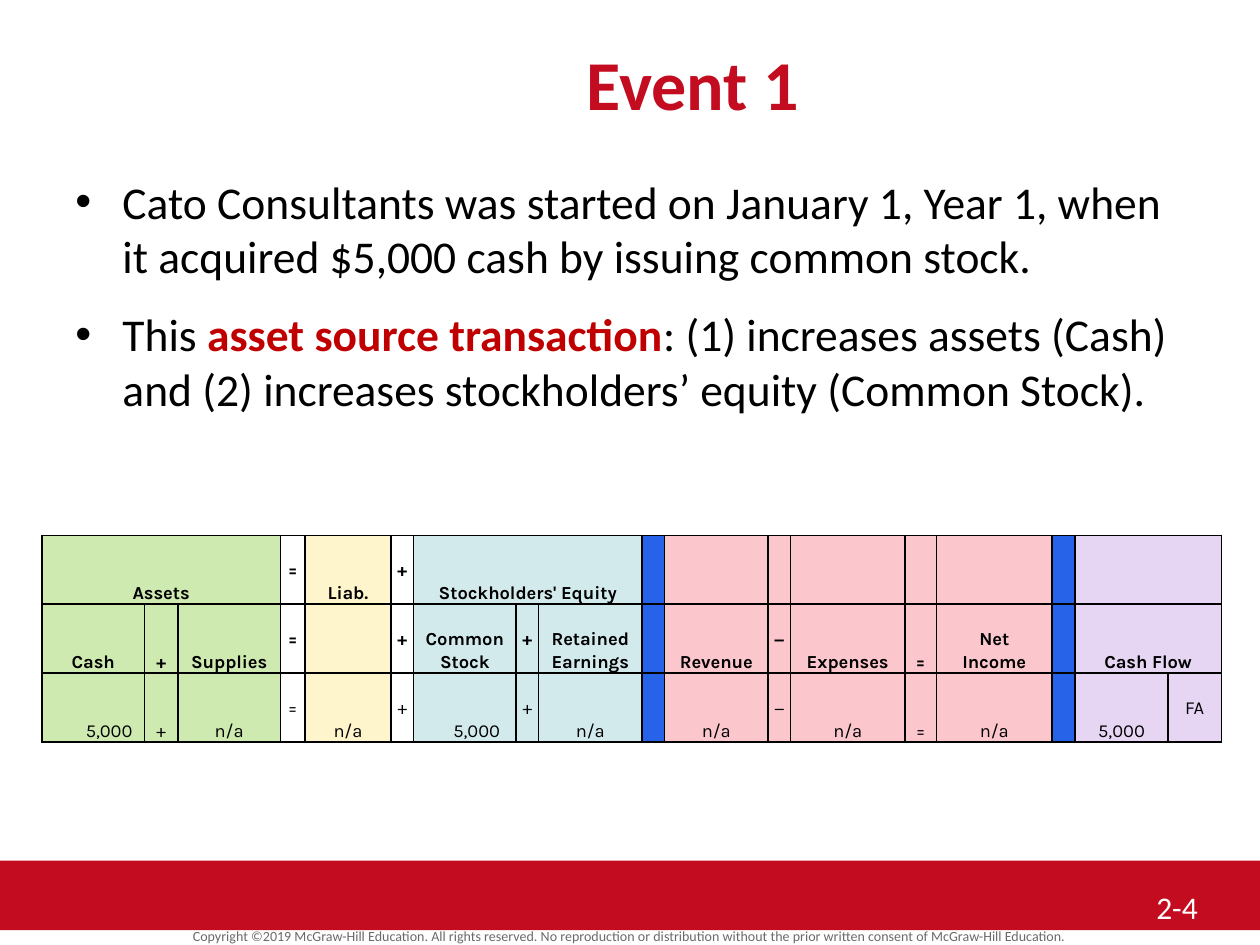
from lxml import etree
from pptx import Presentation
from pptx.dml.color import RGBColor
from pptx.enum.shapes import MSO_SHAPE
from pptx.enum.text import MSO_ANCHOR, MSO_AUTO_SIZE, PP_ALIGN
from pptx.oxml.ns import qn
from pptx.util import Cm, Pt

LEFT, MID, RIGHT = PP_ALIGN.LEFT, PP_ALIGN.CENTER, PP_ALIGN.RIGHT
TOP, BOTTOM = MSO_ANCHOR.TOP, MSO_ANCHOR.BOTTOM
FIXED = MSO_AUTO_SIZE.NONE
RECT = MSO_SHAPE.RECTANGLE

RED = RGBColor(0xC3, 0x0C, 0x20)
DARK_RED = RGBColor(0xC0, 0x00, 0x00)
GREY = RGBColor(0x6A, 0x6A, 0x6A)
BLACK = RGBColor(0x00, 0x00, 0x00)
WHITE = RGBColor(0xFF, 0xFF, 0xFF)
GREEN = RGBColor(0xCE, 0xEA, 0xB0)
CREAM = RGBColor(0xFF, 0xF5, 0xCC)
TEAL = RGBColor(0xD3, 0xEA, 0xED)
BLUE = RGBColor(0x27, 0x63, 0xE9)
PINK = RGBColor(0xFB, 0xC6, 0xCC)
LILAC = RGBColor(0xE6, 0xD5, 0xF3)

# Width in cm and fill of each column; the white ones have no fill.
COLS = [
    (2.06, GREEN), (0.68, GREEN), (2.06, GREEN), (0.5, None),
    (1.73, CREAM), (0.46, None), (2.06, TEAL), (0.46, TEAL), (2.08, TEAL),
    (0.46, BLUE), (2.08, PINK), (0.46, PINK), (2.3, PINK), (0.64, PINK),
    (2.33, PINK), (0.46, BLUE), (1.88, LILAC), (1.07, LILAC),
]
ROWS = [
    ["Assets", "", "", "=", "Liab.", "+", "Stockholders' Equity", "", "",
     "", "", "", "", "", "", "", "", ""],
    ["Cash", "+", "Supplies", "=", "", "+", "Common Stock", "+",
     "Retained Earnings", "", "Revenue", "−", "Expenses", "=",
     "Net\vIncome", "", "Cash Flow", ""],
    ["5,000", "+", "n/a", "=", "n/a", "+", "5,000", "+", "n/a", "",
     "n/a", "−", "n/a", "=", "n/a", "", "5,000", "FA"],
]
SPANS = [(0, 0, 2), (0, 6, 8), (0, 16, 17), (1, 16, 17)]
INDENT = {0: 0.24, 6: 0.32}  # right margin of the right-aligned amounts
SLIM, LIFT = 0.55, 0.46      # signs in slim columns sit one line higher


def apply(item, style):
    for name, value in style.items():
        setattr(item, name, value)


class Deck:
    def __init__(self):
        self.prs = Presentation()
        apply(self.prs, dict(slide_width=Cm(25.4), slide_height=Cm(19.05)))
        self.slide = self.prs.slides.add_slide(self.prs.slide_layouts[5])
        self.face = "Calibri"

    def put(self, par, parts, size, **look):
        """Fill a paragraph with (text, colour, bold) parts."""
        apply(par, look)
        for text, color, bold in parts:
            for i, piece in enumerate(text.split("\v")):
                if i:
                    par.add_line_break()
                run = par.add_run()
                run.text = piece
                apply(run.font, dict(name=self.face, size=Pt(size),
                                     bold=bold))
                run.font.color.rgb = color

    def title(self, box, text, size):
        shape = self.slide.shapes.title
        apply(shape, dict(zip(("left", "top", "width", "height"),
                              map(Cm, box))))
        frame = shape.text_frame
        apply(frame, dict(auto_size=FIXED, vertical_anchor=TOP,
                          margin_top=Cm(0.18)))
        self.put(frame.paragraphs[0], [(text, RED, True)], size,
                 alignment=MID)

    def band(self, box, color):
        shape = self.slide.shapes.add_shape(RECT, *map(Cm, box))
        shape.shadow.inherit = False
        shape.fill.solid()
        shape.fill.fore_color.rgb = color
        shape.line.fill.background()

    def frame(self, box):
        frame = self.slide.shapes.add_textbox(*map(Cm, box)).text_frame
        apply(frame, dict(word_wrap=True, auto_size=FIXED,
                          vertical_anchor=TOP))
        return frame

    def label(self, box, text, size, color, **look):
        par = self.frame(box).paragraphs[0]
        self.put(par, [(text, color, False)], size, **look)

    def bullets(self, box, items, size):
        frame = self.frame(box)
        for i, parts in enumerate(items):
            par = frame.add_paragraph() if i else frame.paragraphs[0]
            props = par._p.get_or_add_pPr()
            hang = Cm(0.95)
            props.set("marL", str(hang))
            props.set("indent", str(-hang))
            font = etree.SubElement(props, qn("a:buFont"))
            font.set("typeface", "Arial")
            etree.SubElement(props, qn("a:buChar")).set("char", "•")
            self.put(par, parts, size, alignment=LEFT, space_after=Pt(8),
                     space_before=Pt(5.2 if i else 0))

    def border(self, cell):
        props = cell._tc.get_or_add_tcPr()
        for i, side in enumerate(("lnL", "lnR", "lnT", "lnB")):
            line = etree.Element(qn("a:" + side), w=str(Pt(1)))
            fill = etree.SubElement(line, qn("a:solidFill"))
            etree.SubElement(fill, qn("a:srgbClr")).set("val", str(BLACK))
            props.insert(i, line)

    def cell(self, cell, text, wide, color, bold, edge, lift):
        side = Cm(0.18 if wide > 1 else 0)
        apply(cell, dict(
            vertical_anchor=BOTTOM, margin_left=side,
            margin_right=Cm(edge) if edge else side,
            margin_top=0, margin_bottom=Cm(LIFT if lift else 0)))
        if color is None:
            cell.fill.background()
        else:
            cell.fill.solid()
            cell.fill.fore_color.rgb = color
        self.border(cell)
        if text:
            par = cell.text_frame.paragraphs[0]
            self.put(par, [(text, BLACK, bold)], 10.5, line_spacing=1.07,
                     alignment=RIGHT if edge else MID)

    def table(self, left, top, tall):
        self.face = "Karla"
        total = sum(wide for wide, _ in COLS)
        table = self.slide.shapes.add_table(
            len(ROWS), len(COLS), Cm(left), Cm(top), Cm(total),
            Cm(tall * len(ROWS))).table
        apply(table, dict(first_row=False, horz_banding=False))
        for c, (wide, _) in enumerate(COLS):
            table.columns[c].width = Cm(wide)
        last = len(ROWS) - 1
        for r, row in enumerate(ROWS):
            table.rows[r].height = Cm(tall)
            for c, (text, (wide, color)) in enumerate(zip(row, COLS)):
                edge = INDENT.get(c) if r == last else None
                self.cell(table.cell(r, c), text, wide, color, r < last,
                          edge, wide < SLIM or text == "FA")
        for r, start, end in SPANS:
            table.cell(r, start).merge(table.cell(r, end))
        self.face = "Calibri"


def main():
    deck = Deck()
    deck.band((0, 17.35, 25.4, 1.4), RED)
    deck.label((0, 18.64, 25.4, 0.48),
               "Copyright ©2019 McGraw-Hill Education. All rights reserved. "
               "No reproduction or distribution without the prior written "
               "consent of McGraw-Hill Education.",
               8, GREY, alignment=MID, line_spacing=0.8)
    deck.title((2.54, 0.64, 22.86, 1.7), "Event 1", 40)
    deck.bullets((1.27, 3.38, 22.86, 13.13), [
        [("Cato Consultants was started on January 1, Year 1, when it "
          "acquired $5,000 cash by issuing common stock.", BLACK, False)],
        [("This ", BLACK, False),
         ("asset source transaction", DARK_RED, True),
         (": (1) increases assets (Cash) and (2) increases stockholders’ "
          "equity (Common Stock).", BLACK, False)],
    ], 26)
    deck.label((23.06, 17.78, 2.34, 1.07), "2-4", 18, WHITE, alignment=LEFT)
    deck.table(0.85, 10.79, 1.39)
    deck.prs.save("out.pptx")


if __name__ == "__main__":
    main()
